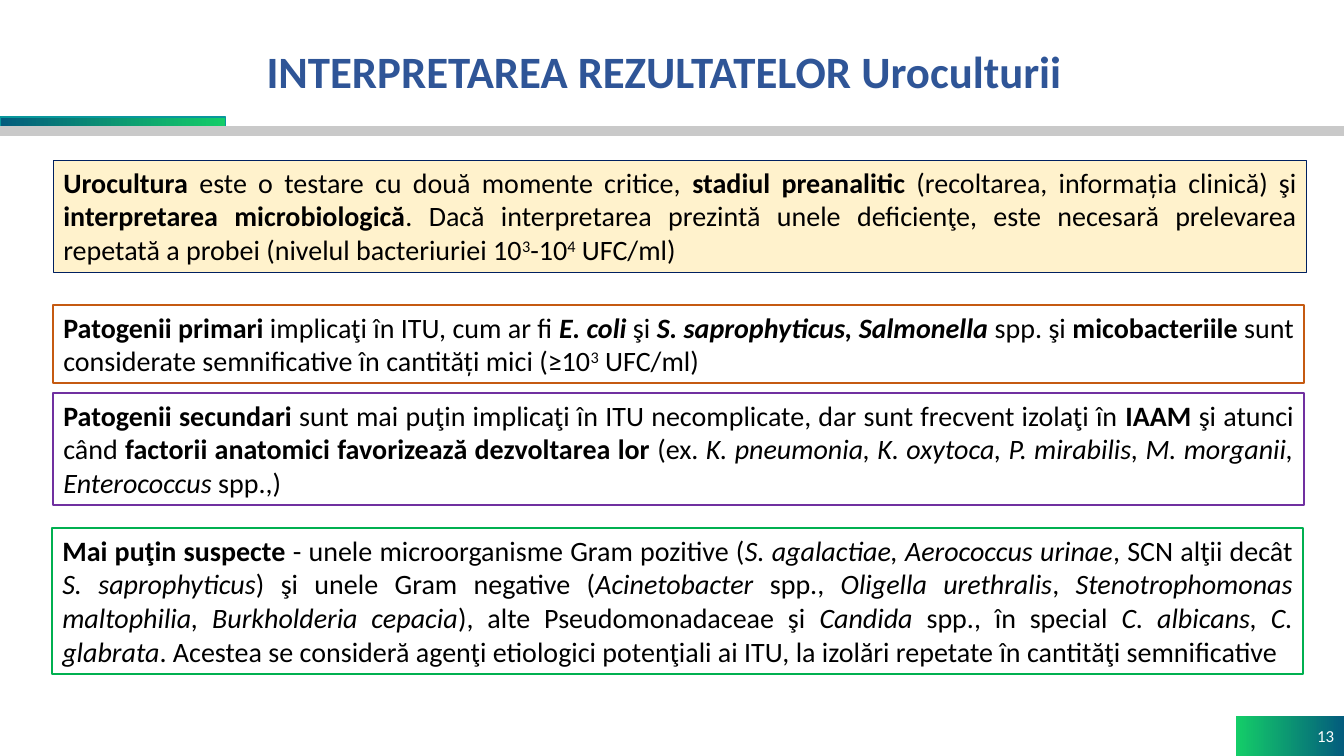
from pptx import Presentation
from pptx.dml.color import RGBColor
from pptx.enum.shapes import MSO_SHAPE
from pptx.enum.text import MSO_ANCHOR, MSO_AUTO_SIZE, PP_ALIGN
from pptx.util import Inches, Pt

RECTANGLE = MSO_SHAPE.RECTANGLE
MIDDLE, TOP = MSO_ANCHOR.MIDDLE, MSO_ANCHOR.TOP
CENTER, RIGHT, JUSTIFY = PP_ALIGN.CENTER, PP_ALIGN.RIGHT, PP_ALIGN.JUSTIFY
GROW = MSO_AUTO_SIZE.SHAPE_TO_FIT_TEXT
FIXED = MSO_AUTO_SIZE.NONE

BLACK = RGBColor(0x00, 0x00, 0x00)
WHITE = RGBColor(0xFF, 0xFF, 0xFF)
TITLE_BLUE = RGBColor(0x2F, 0x55, 0x97)
GREEN = RGBColor(0x14, 0xCD, 0x68)
PETROL = RGBColor(0x03, 0x5C, 0x7D)
TEAL = RGBColor(0x08, 0x97, 0x9C)
GREY = RGBColor(0xC9, 0xC9, 0xC9)
CREAM = RGBColor(0xFF, 0xF2, 0xCC)
NAVY = RGBColor(0x00, 0x20, 0x60)
ORANGE = RGBColor(0xC5, 0x5A, 0x11)
PURPLE = RGBColor(0x70, 0x30, 0xA0)
BOX_GREEN = RGBColor(0x00, 0xB0, 0x50)


def write_text(paragraph, text, size=20, color=BLACK, bold=False, italic=False, superscript=False):
    run = paragraph.add_run()
    run.text = text
    run.font.name = "Calibri"
    run.font.size = Pt(size)
    run.font.color.rgb = color
    run.font.bold = bold
    run.font.italic = italic
    if superscript:
        run._r.get_or_add_rPr().set("baseline", "30000")


def add_rectangle(left, top, width, height, fill=None, gradient=None, line=None, line_width=1):
    shape = slide.shapes.add_shape(
        RECTANGLE, Inches(left), Inches(top), Inches(width), Inches(height))
    shape.shadow.inherit = False
    if gradient:
        shape.fill.gradient()
        shape.fill.gradient_angle = 0
        for stop, color in zip(shape.fill.gradient_stops, gradient):
            stop.color.rgb = color
    elif fill is None:
        shape.fill.background()
    else:
        shape.fill.solid()
        shape.fill.fore_color.rgb = fill
    if line is None:
        shape.line.fill.background()
    else:
        shape.line.color.rgb = line
        shape.line.width = Pt(line_width)
    return shape


presentation = Presentation()
presentation.slide_width = Inches(13.33)
presentation.slide_height = Inches(7.5)
slide = presentation.slides.add_slide(presentation.slide_layouts[5])

add_rectangle(0, 1.16, 2.24, 0.1, gradient=[PETROL, GREEN], line=TEAL)
add_rectangle(0, 1.26, 13.33, 0.08, fill=GREY, line=GREY)

number_box = add_rectangle(12.26, 7.1, 1.07, 0.4, gradient=[GREEN, PETROL])
number_box.text_frame.vertical_anchor = MIDDLE
paragraph = number_box.text_frame.paragraphs[0]
paragraph.alignment = RIGHT
write_text(paragraph, "13", size=12, color=WHITE)

title = slide.shapes.title
title.left, title.top = Inches(0.92), Inches(0.36)
title.width, title.height = Inches(11.34), Inches(0.75)
title.text_frame.auto_size = FIXED
title.text_frame.vertical_anchor = MIDDLE
paragraph = title.text_frame.paragraphs[0]
paragraph.alignment = CENTER
paragraph.line_spacing = 0.9
write_text(paragraph, "INTERPRETAREA REZULTATELOR Uroculturii", size=32, color=TITLE_BLUE, bold=True)

PLAIN = {}
BOLD = {"bold": True}
ITALIC = {"italic": True}
BOLD_ITALIC = {"bold": True, "italic": True}
SUPERSCRIPT = {"superscript": True}

boxes = [
    ((0.53, 1.59, 12.43, 1.11), CREAM, NAVY, 0.75, [
        ("Urocultura", BOLD),
        (" este o testare cu două momente critice, ", PLAIN),
        ("stadiul preanalitic", BOLD),
        (" (recoltarea, informația clinică) şi ", PLAIN),
        ("interpretarea microbiologică", BOLD),
        (". Dacă interpretarea prezintă unele deficienţe, este necesară prelevarea "
         "repetată a probei (nivelul bacteriuriei 10", PLAIN),
        ("3", SUPERSCRIPT),
        ("-10", PLAIN),
        ("4", SUPERSCRIPT),
        (" UFC/ml)", PLAIN),
    ]),
    ((0.53, 3.03, 12.4, 0.77), None, ORANGE, 1.5, [
        ("Patogenii primari", BOLD),
        (" implicaţi în ITU, cum ar fi ", PLAIN),
        ("E. coli ", BOLD_ITALIC),
        ("şi ", PLAIN),
        ("S. saprophyticus, Salmonella", BOLD_ITALIC),
        (" spp. şi ", PLAIN),
        ("micobacteriile", BOLD),
        (" sunt considerate semnificative în cantități mici (≥10", PLAIN),
        ("3", SUPERSCRIPT),
        (" UFC/ml)", PLAIN),
    ]),
    ((0.53, 3.9, 12.4, 1.11), None, PURPLE, 1.5, [
        ("Patogenii secundari", BOLD),
        (" sunt mai puţin implicaţi în ITU necomplicate, dar sunt frecvent izolaţi în ", PLAIN),
        ("IAAM ", BOLD),
        ("şi atunci când ", PLAIN),
        ("factorii anatomici favorizează dezvoltarea lor ", BOLD),
        ("(ex. ", PLAIN),
        ("K. pneumonia, K. oxytoca, P. mirabilis, M. morganii, Enterococcus", ITALIC),
        (" spp.,)", PLAIN),
    ]),
    ((0.52, 5.24, 12.4, 1.45), WHITE, BOX_GREEN, 1.5, [
        ("Mai puţin suspecte ", BOLD),
        ("- unele microorganisme Gram pozitive (", PLAIN),
        ("S. agalactiae, Aerococcus urinae", ITALIC),
        (", SCN alţii decât ", PLAIN),
        ("S. saprophyticus", ITALIC),
        (") şi unele Gram negative (", PLAIN),
        ("Acinetobacter", ITALIC),
        (" spp., ", PLAIN),
        ("Oligella urethralis", ITALIC),
        (", ", PLAIN),
        ("Stenotrophomonas maltophilia, Burkholderia cepacia", ITALIC),
        ("), alte Pseudomonadaceae şi ", PLAIN),
        ("Candida", ITALIC),
        (" spp., în special ", PLAIN),
        ("C. albicans, C. glabrata", ITALIC),
        (". Acestea se consideră agenţi etiologici potenţiali ai ITU, "
         "la izolări repetate în cantităţi semnificative", PLAIN),
    ]),
]

for position, fill, line, line_width, runs in boxes:
    box = add_rectangle(*position, fill=fill, line=line, line_width=line_width)
    box.text_frame.word_wrap = True
    box.text_frame.auto_size = GROW
    box.text_frame.vertical_anchor = TOP
    paragraph = box.text_frame.paragraphs[0]
    paragraph.alignment = JUSTIFY
    for text, style in runs:
        write_text(paragraph, text, **style)

presentation.save("out.pptx")
